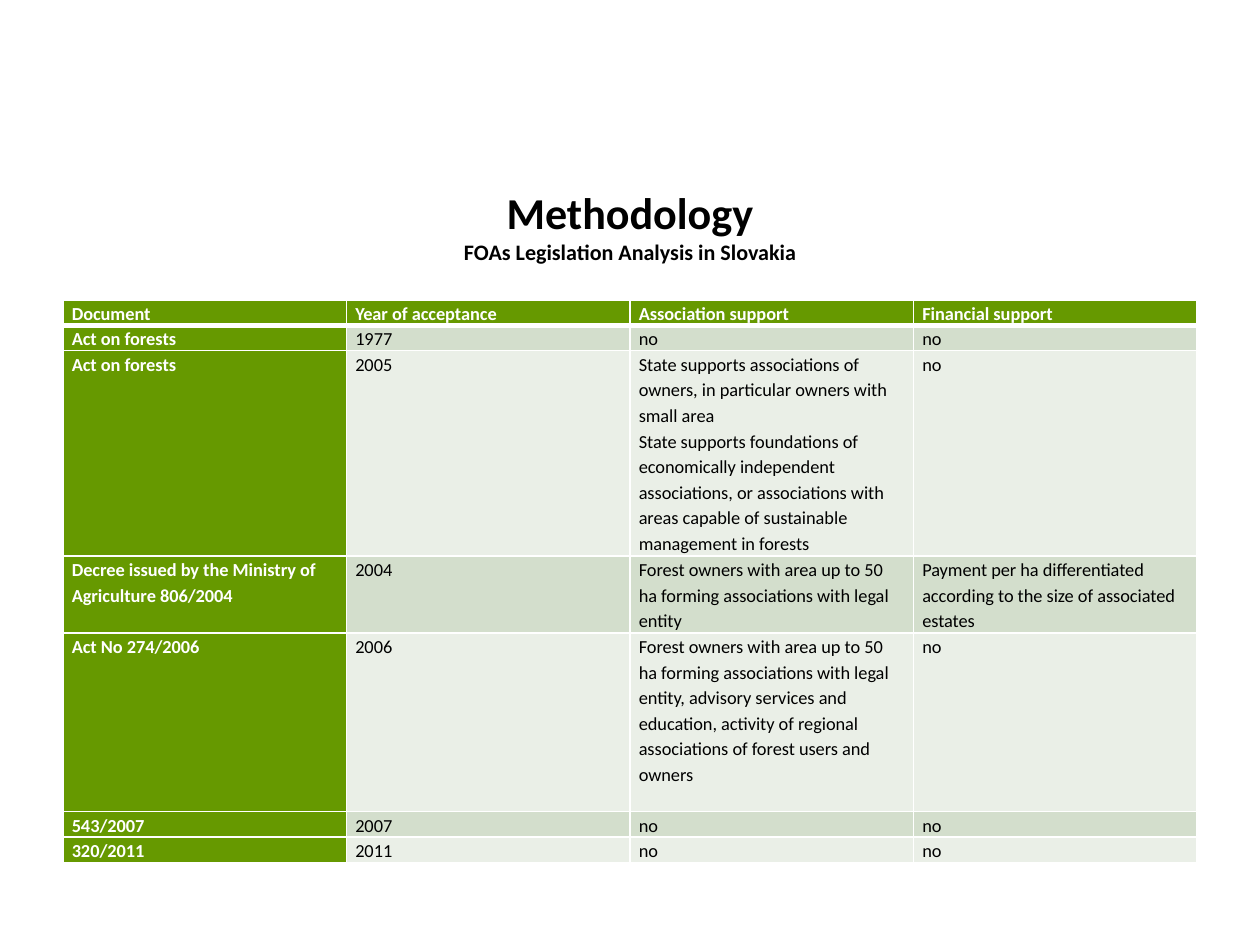
from dataclasses import dataclass

from lxml import etree
from pptx import Presentation
from pptx import util as u
from pptx.dml.color import RGBColor
from pptx.enum import text
from pptx.oxml.ns import qn
from pptx.slide import Slide
from pptx.table import _Cell

COLORS = {
    "black": "000000",
    "white": "FFFFFF",
    "green": "669900",
    "odd_band": "D3DECC",
    "even_band": "EAEFE7",
}
FONT = "Calibri"
LINE_HEIGHT = 0.2


@dataclass
class Record:
    document: str
    year: str
    association: str
    financial: str
    height: float = LINE_HEIGHT

    def values(self) -> list[str]:
        return [self.document, self.year, self.association, self.financial]


RECORDS = [
    Record("Document", "Year of acceptance", "Association support", "Financial support"),
    Record("Act on forests", "1977", "no", "no"),
    Record(
        "Act on forests",
        "2005",
        "State supports associations of owners, in particular owners with small area\n"
        "State supports foundations of economically independent associations, or "
        "associations with areas capable of sustainable management in forests",
        "no",
        1.63,
    ),
    Record(
        "Decree issued by the Ministry of Agriculture 806/2004",
        "2004",
        "Forest owners with area up to 50 ha forming associations with legal entity",
        "Payment per ha differentiated according to the size of associated estates",
        0.61,
    ),
    Record(
        "Act No 274/2006",
        "2006",
        "Forest owners with area up to 50 ha forming associations with legal entity, "
        "advisory services and education, activity of regional associations of "
        "forest users and owners",
        "no",
        1.42,
    ),
    Record("543/2007", "2007", "no", "no"),
    Record("320/2011", "2011", "no", "no"),
]


def color(name: str) -> RGBColor:
    return RGBColor.from_string(COLORS[name])


def add_heading(slide: Slide) -> None:
    box = slide.shapes.add_textbox(u.Inches(0.5), u.Inches(1.39), u.Inches(9), u.Inches(0.79))
    frame = box.text_frame
    frame.word_wrap = True
    frame.vertical_anchor = text.MSO_ANCHOR.MIDDLE
    paragraph = frame.paragraphs[0]
    paragraph.alignment = text.PP_ALIGN.CENTER
    paragraph.font.name = FONT
    paragraph.font.bold = True
    paragraph.font.color.rgb = color("black")
    title = paragraph.add_run()
    title.text = "Methodology"
    title.font.size = u.Pt(25.2)
    paragraph.add_line_break()
    subtitle = paragraph.add_run()
    subtitle.text = "FOAs Legislation Analysis in Slovakia"
    subtitle.font.size = u.Pt(12.6)


def set_borders(cell: _Cell, widths: dict[str, float]) -> None:
    properties = cell._tc.get_or_add_tcPr()
    for side, width in widths.items():
        line = etree.SubElement(properties, qn(f"a:ln{side}"), w=str(u.Pt(width)))
        fill = etree.SubElement(line, qn("a:solidFill"))
        etree.SubElement(fill, qn("a:srgbClr"), val=COLORS["white"])


def fill_cell(cell: _Cell, content: str, row: int, column: int) -> None:
    emphasized = row == 0 or column == 0
    band = "odd_band" if row % 2 else "even_band"
    set_borders(cell, {"L": 1, "R": 1, "T": 3 if row == 1 else 1, "B": 1 if row else 3})
    cell.fill.solid()
    cell.fill.fore_color.rgb = color("green" if emphasized else band)
    cell.margin_left = cell.margin_right = u.Inches(0.07)
    cell.margin_top = cell.margin_bottom = 0
    cell.text = content
    for paragraph in cell.text_frame.paragraphs:
        paragraph.line_spacing = 1.15
        paragraph.font.name = FONT
        paragraph.font.size = u.Pt(10.5)
        paragraph.font.bold = emphasized
        paragraph.font.color.rgb = color("white" if emphasized else "black")


def add_legislation_table(slide: Slide, records: list[Record]) -> None:
    height = sum(record.height for record in records)
    table = slide.shapes.add_table(
        len(records), 4, u.Inches(0.5), u.Inches(2.38), u.Inches(9), u.Inches(height)
    ).table
    table.first_col = True
    for row, record in enumerate(records):
        table.rows[row].height = u.Inches(record.height)
        for column, content in enumerate(record.values()):
            fill_cell(table.cell(row, column), content, row, column)


def main() -> None:
    presentation = Presentation()
    presentation.slide_width = u.Inches(10)
    presentation.slide_height = u.Inches(7.5)
    slide = presentation.slides.add_slide(presentation.slide_layouts[6])

    # Title and subtitle
    add_heading(slide)
    # Legislation overview
    add_legislation_table(slide, RECORDS)

    presentation.save("out.pptx")


if __name__ == "__main__":
    main()
